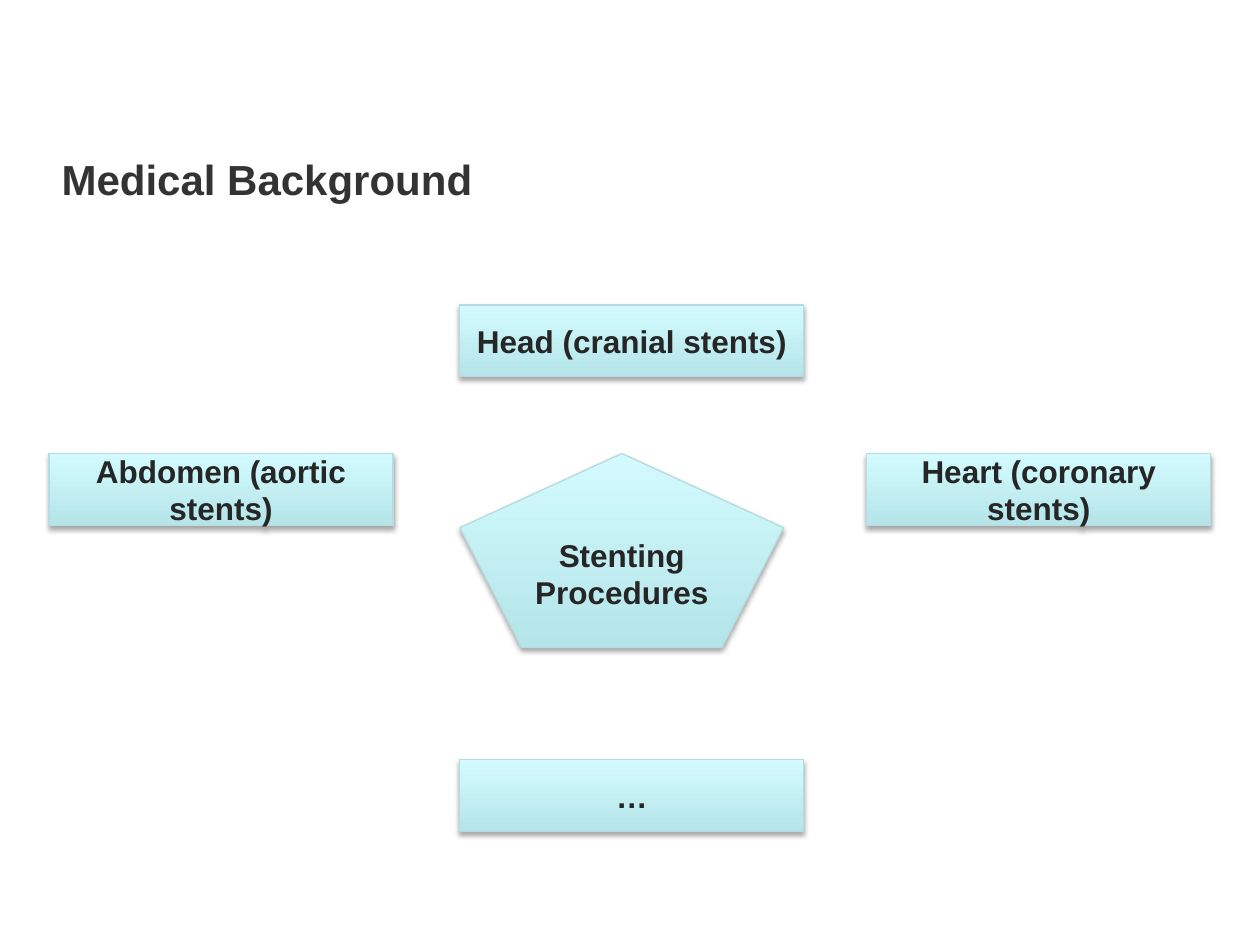
from dataclasses import dataclass

from lxml.etree import SubElement
from pptx import Presentation
from pptx.dml.color import RGBColor
from pptx.enum.shapes import MSO_SHAPE
from pptx.enum.text import MSO_ANCHOR, PP_ALIGN
from pptx.oxml.ns import qn
from pptx.shapes.autoshape import Shape
from pptx.slide import Slide
from pptx.util import Inches, Pt

TITLE_COLOR = RGBColor(0x33, 0x33, 0x33)
LABEL_COLOR = RGBColor(0x26, 0x26, 0x26)
GRADIENT = (RGBColor(0xB5, 0xE5, 0xE9), RGBColor(0xD3, 0xFB, 0xFF))
OUTLINE = RGBColor(0xB6, 0xDC, 0xDF)
SHADOW = RGBColor(0, 0, 0)

COLUMNS = (0.39, 3.65, 6.88)
ROWS = (2.42, 3.6, 6.03)
LABEL_SIZE = (2.73, 0.57)
CENTER_SIZE = (2.57, 1.54)


@dataclass(frozen=True)
class Node:
    text: str
    column: int
    row: int
    size: tuple[float, float] = LABEL_SIZE
    kind: MSO_SHAPE = MSO_SHAPE.RECTANGLE


NODES = (
    Node("Stenting Procedures", 1, 1, CENTER_SIZE, MSO_SHAPE.REGULAR_PENTAGON),
    Node("Head (cranial stents)", 1, 0),
    Node("Heart (coronary stents)", 2, 1),
    Node("Abdomen (aortic stents)", 0, 1),
    Node("…", 1, 2),
)


def write_text(shape: Shape, text: str, size: int, color: RGBColor,
               anchor: MSO_ANCHOR, align: PP_ALIGN) -> None:
    frame = shape.text_frame
    frame.word_wrap = True
    frame.vertical_anchor = anchor
    para = frame.paragraphs[0]
    para.alignment = align
    span = para.add_run()
    span.text = text
    span.font.name = "Arial"
    span.font.size = Pt(size)
    span.font.bold = True
    span.font.color.rgb = color


def add_shadow(shape: Shape) -> None:
    shape.shadow.inherit = False
    effects = shape._element.spPr.find(qn("a:effectLst"))
    outer = SubElement(effects, qn("a:outerShdw"), blurRad=str(Pt(3.1)),
                       dist=str(Pt(1.8)), dir="5400000", rotWithShape="0")
    color = SubElement(outer, qn("a:srgbClr"), val=str(SHADOW))
    SubElement(color, qn("a:alpha"), val="35000")


def draw_title(page: Slide, text: str) -> None:
    box = page.shapes.add_textbox(Inches(COLUMNS[0]), Inches(1), Inches(9.21), Inches(0.67))
    write_text(box, text, 24, TITLE_COLOR, MSO_ANCHOR.BOTTOM, PP_ALIGN.LEFT)


def draw_node(page: Slide, node: Node) -> None:
    width, height = node.size
    shape = page.shapes.add_shape(
        node.kind, Inches(COLUMNS[node.column]), Inches(ROWS[node.row]),
        Inches(width), Inches(height))
    add_shadow(shape)
    shape.fill.gradient()
    shape.fill.gradient_angle = 90
    for stop, color in zip(shape.fill.gradient_stops, GRADIENT):
        stop.color.rgb = color
    shape.line.color.rgb = OUTLINE
    shape.line.width = Pt(0.75)
    write_text(shape, node.text, 18, LABEL_COLOR, MSO_ANCHOR.MIDDLE, PP_ALIGN.CENTER)


def main() -> None:
    deck = Presentation()
    deck.slide_width = Inches(10)
    deck.slide_height = Inches(7.5)
    page = deck.slides.add_slide(deck.slide_layouts[6])
    draw_title(page, "Medical Background")
    for node in NODES:
        draw_node(page, node)
    deck.save("out.pptx")


if __name__ == "__main__":
    main()
